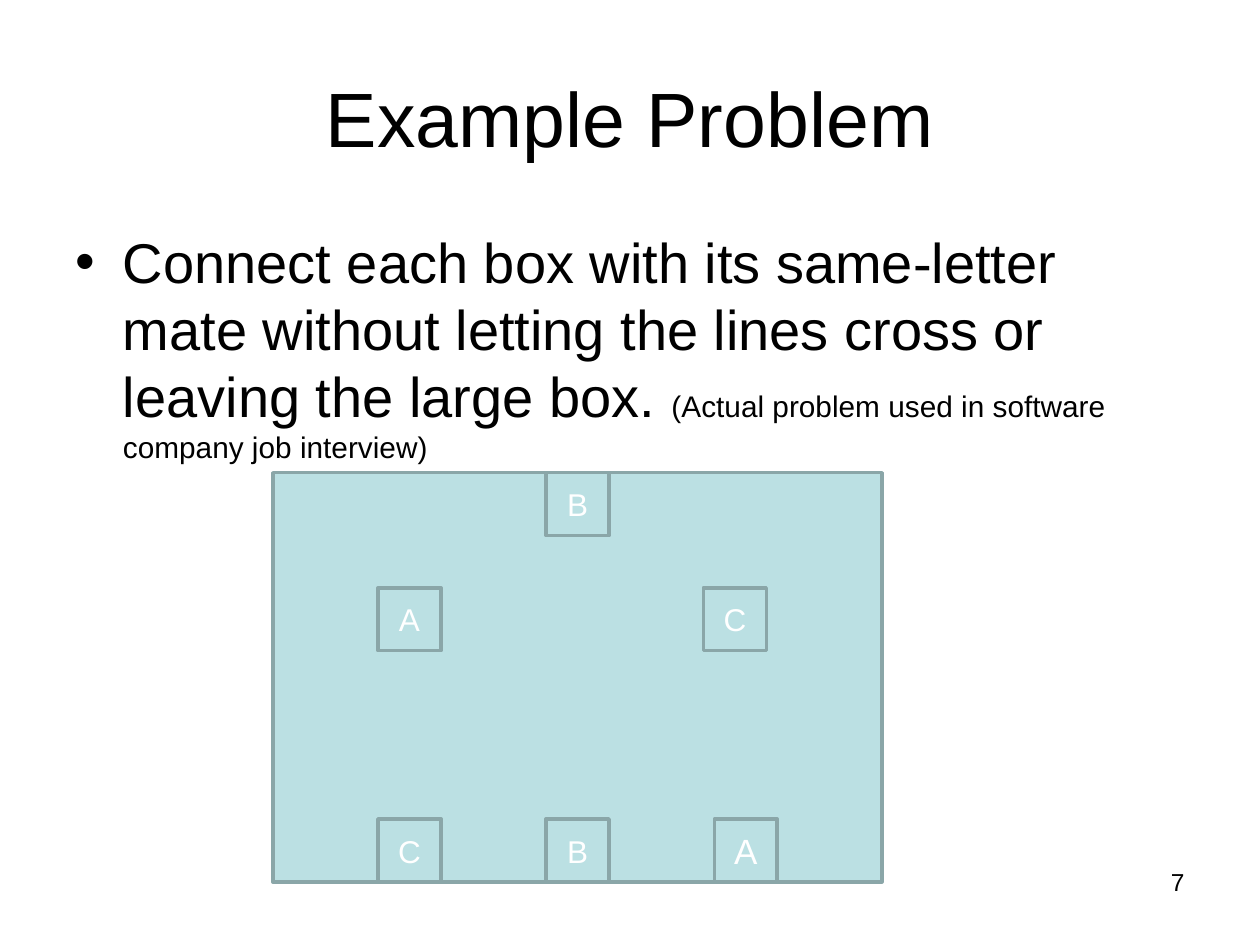
"""Build the "Example Problem" slide with its box-connecting puzzle."""
import pptx
import pptx.util
import pptx.dml.color
import pptx.enum.shapes
import pptx.enum.text

Cm, Pt = pptx.util.Cm, pptx.util.Pt
ALIGN = pptx.enum.text.PP_ALIGN
ANCHOR = pptx.enum.text.MSO_ANCHOR
COLORS = {"text": "000000", "fill": "BBE0E3", "line": "8AA6A8", "letter": "FFFFFF"}


def style_font(font, size, color):
    font.name = "Arial"
    font.size = Pt(size)
    font.color.rgb = pptx.dml.color.RGBColor.from_string(COLORS[color])


def add_box(shapes, left, top, width, height):
    sp = shapes.add_shape(pptx.enum.shapes.MSO_SHAPE.RECTANGLE,
                          Cm(left), Cm(top), Cm(width), Cm(height))
    sp.shadow.inherit = False
    sp.fill.solid()
    sp.fill.fore_color.rgb = pptx.dml.color.RGBColor.from_string(COLORS["fill"])
    sp.line.color.rgb = pptx.dml.color.RGBColor.from_string(COLORS["line"])
    sp.line.width = Pt(2)
    return sp


prs = pptx.Presentation()
prs.slide_width, prs.slide_height = Cm(25.4), Cm(19.05)
slide = prs.slides.add_slide(prs.slide_layouts[1])

title, body = slide.placeholders
title.left, title.top, title.width, title.height = Cm(1.27), Cm(0.76), Cm(22.86), Cm(3.18)
title.text_frame.text = "Example Problem"
title.text_frame.vertical_anchor = ANCHOR.MIDDLE
p = title.text_frame.paragraphs[0]
p.alignment = ALIGN.CENTER
style_font(p.font, 44, "text")

body.left, body.top, body.width, body.height = Cm(1.27), Cm(4.45), Cm(22.86), Cm(12.57)
tf = body.text_frame
tf.auto_size = pptx.enum.text.MSO_AUTO_SIZE.NONE
p = tf.paragraphs[0]
for text, size in [
    ("Connect each box with its same-letter mate without letting the lines cross "
     "or leaving the large box. ", 32),
    ("(Actual problem used in software company job interview)", 17),
]:
    r = p.add_run()
    r.text = text
    style_font(r.font, size, "text")

group = slide.shapes.add_group_shape()
add_box(group.shapes, 5.5, 9.53, 12.28, 8.25)

side = 1.27
left_x, middle_x = 7.62, 11.01
top_y, middle_y, bottom_y = 9.53, 11.85, 16.51
for letter, x, y, size in [
    ("A", left_x, middle_y, 18),
    ("B", middle_x, top_y, 18),
    ("C", 14.18, middle_y, 18),
    ("C", left_x, bottom_y, 18),
    ("B", middle_x, bottom_y, 18),
    ("A", 14.4, bottom_y, 20),
]:
    sp = add_box(group.shapes, x, y, side, side)
    tf = sp.text_frame
    tf.text = letter
    tf.vertical_anchor = ANCHOR.MIDDLE
    p = tf.paragraphs[0]
    p.alignment = ALIGN.CENTER
    style_font(p.font, size, "letter")

number = slide.shapes.add_textbox(Cm(18.2), Cm(17.35), Cm(5.93), Cm(1.32))
tf = number.text_frame
tf.word_wrap = True
tf.text = "7"
p = tf.paragraphs[0]
p.alignment = ALIGN.RIGHT
style_font(p.font, 14, "text")

prs.save("out.pptx")
